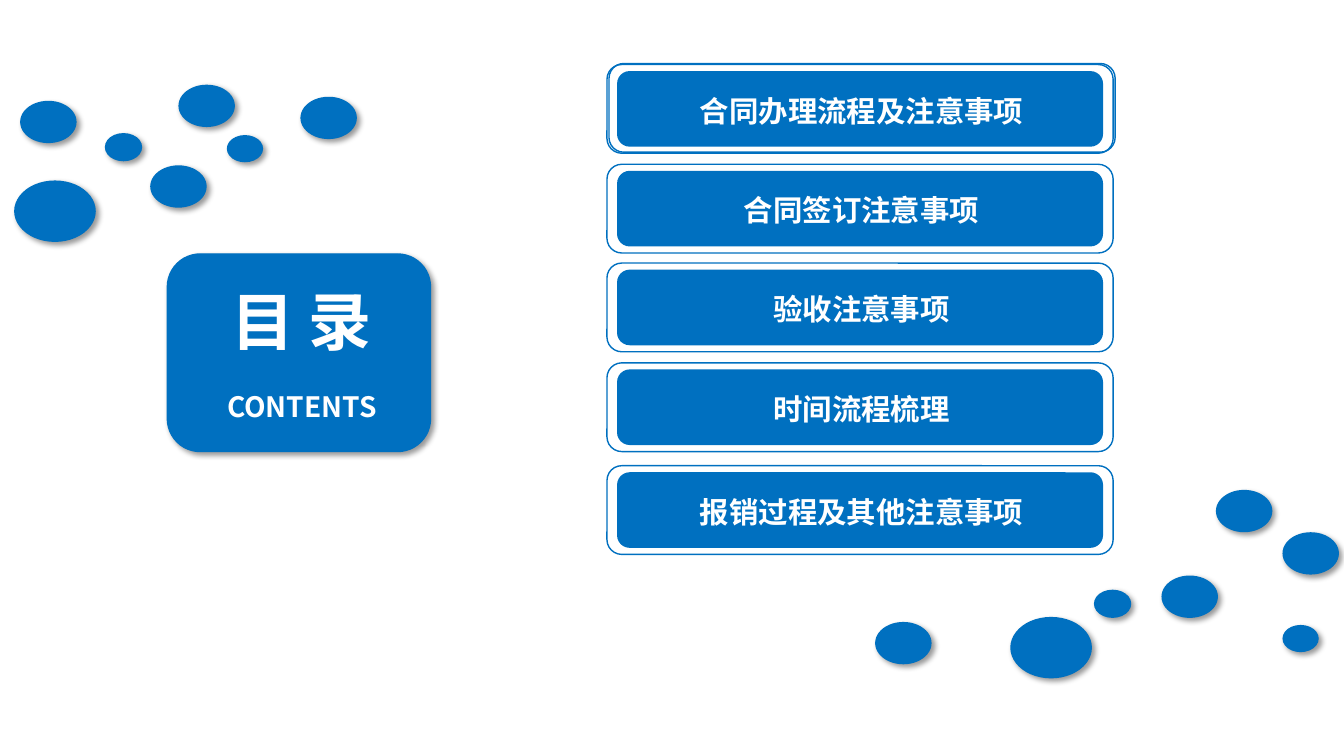
from lxml.etree import SubElement
from pptx import Presentation
from pptx.dml.color import RGBColor
from pptx.enum.shapes import MSO_SHAPE as Shape
from pptx.enum.text import MSO_ANCHOR as Anchor, PP_ALIGN as Align
from pptx.oxml.ns import qn
from pptx.util import Inches, Pt

BLUE = RGBColor(0x00, 0x70, 0xC0)
WHITE = RGBColor(0xFF, 0xFF, 0xFF)
FONT = "Noto Sans CJK SC"

TOPICS = [
    ("合同办理流程及注意事项", 0.64),
    ("合同签订注意事项", 1.63),
    ("验收注意事项", 2.61),
    ("时间流程梳理", 3.6),
    ("报销过程及其他注意事项", 4.62),
]

# Dot sizes: width, height
DOT_SIZES = {"large": (0.81, 0.61), "medium": (0.56, 0.42),
             "small": (0.37, 0.28), "tiny": (0.36, 0.27)}
# Dots: size, left and top within their cluster
TOP_LEFT_DOTS = [
    ("medium", 0.06, 0.16), ("medium", 2.84, 0.12), ("small", 0.9, 0.48),
    ("medium", 1.63, 0), ("large", 0, 0.95), ("medium", 1.35, 0.8),
    ("tiny", 2.11, 0.5),
]
BOTTOM_RIGHT_DOTS = [
    ("medium", 0, 1.31), ("medium", 4.04, 0.42), ("small", 2.17, 0.99),
    ("medium", 3.38, 0), ("large", 1.34, 1.26), ("medium", 2.84, 0.85),
    ("tiny", 4.04, 1.34),
]


def add_shadow(shape):
    """Soft black shadow falling to the lower right."""
    effects = shape._element.spPr.find(qn("a:effectLst"))
    shadow = SubElement(effects, qn("a:outerShdw"), blurRad=str(Pt(4)),
                        dist=str(Pt(3)), dir=str(45 * 60000),
                        algn="tl", rotWithShape="0")
    color = SubElement(shadow, qn("a:srgbClr"), val="000000")
    SubElement(color, qn("a:alpha"), val="40000")


def draw_shape(page, kind, box, fill=None, line=None, shadow=False):
    shape = page.shapes.add_shape(kind, *map(Inches, box))
    shape.shadow.inherit = False
    if fill is None:
        shape.fill.background()
    else:
        shape.fill.solid()
        shape.fill.fore_color.rgb = fill
    if line is None:
        shape.line.fill.background()
    else:
        shape.line.color.rgb = line
        shape.line.width = Pt(1)
    if shadow:
        add_shadow(shape)


def draw_text(page, text, box, size, side=0, edge=0, anchor=Anchor.TOP):
    frame = page.shapes.add_textbox(*map(Inches, box)).text_frame
    frame_format = {
        "word_wrap": True, "vertical_anchor": anchor,
        "margin_left": Inches(side), "margin_right": Inches(side),
        "margin_top": Inches(edge), "margin_bottom": Inches(edge),
    }
    for name, value in frame_format.items():
        setattr(frame, name, value)
    para = frame.paragraphs[0]
    para.alignment = Align.CENTER
    span = para.add_run()
    span.text = text
    for name, value in {"size": Pt(size), "bold": True, "name": FONT}.items():
        setattr(span.font, name, value)
    span.font.color.rgb = WHITE
    # East Asian characters take their own typeface
    SubElement(span._r.get_or_add_rPr(), qn("a:ea"), typeface=FONT)


def draw_title_card(page, box):
    left, top, width, height = box
    draw_shape(page, Shape.ROUNDED_RECTANGLE, box, BLUE, BLUE, shadow=True)
    draw_text(page, "目 录", (left + 0.32, top + 0.28, 2.02, 0.76), 45,
              anchor=Anchor.MIDDLE)
    draw_text(page, "CONTENTS", (left + 0.26, top + 1.34, 2.15, 0.34), 20)


def draw_topic(page, text, box):
    left, top, width, height = box
    bar = (left + 0.1, top + 0.065, width - 0.2, height - 0.13)
    draw_shape(page, Shape.ROUNDED_RECTANGLE, bar, BLUE)
    draw_text(page, text, (left + 0.23, top + 0.24, 4.59, 0.42), 21,
              side=0.07, edge=0.04)
    draw_shape(page, Shape.ROUNDED_RECTANGLE, box, line=BLUE)


def draw_topics(page, left, width, height):
    for text, top in TOPICS:
        draw_topic(page, text, (left, top, width, height))
    # Second outline, slightly offset, marks the first topic
    draw_shape(page, Shape.ROUNDED_RECTANGLE,
               (left + 0.02, TOPICS[0][1] - 0.01, width, height), line=BLUE)


def draw_dots(page, left, top, dots):
    for size, x, y in dots:
        box = (left + x, top + y, *DOT_SIZES[size])
        draw_shape(page, Shape.OVAL, box, BLUE, shadow=True)


def main():
    deck = Presentation()
    deck.slide_width, deck.slide_height = Inches(13.33), Inches(7.5)
    page = deck.slides.add_slide(deck.slide_layouts[6])
    draw_title_card(page, (1.66, 2.52, 2.61, 1.96))
    draw_dots(page, 0.14, 0.84, TOP_LEFT_DOTS)
    draw_dots(page, 8.68, 4.86, BOTTOM_RIGHT_DOTS)
    draw_topics(page, 6.02, 5.02, 0.88)
    deck.save("out.pptx")


if __name__ == "__main__":
    main()
